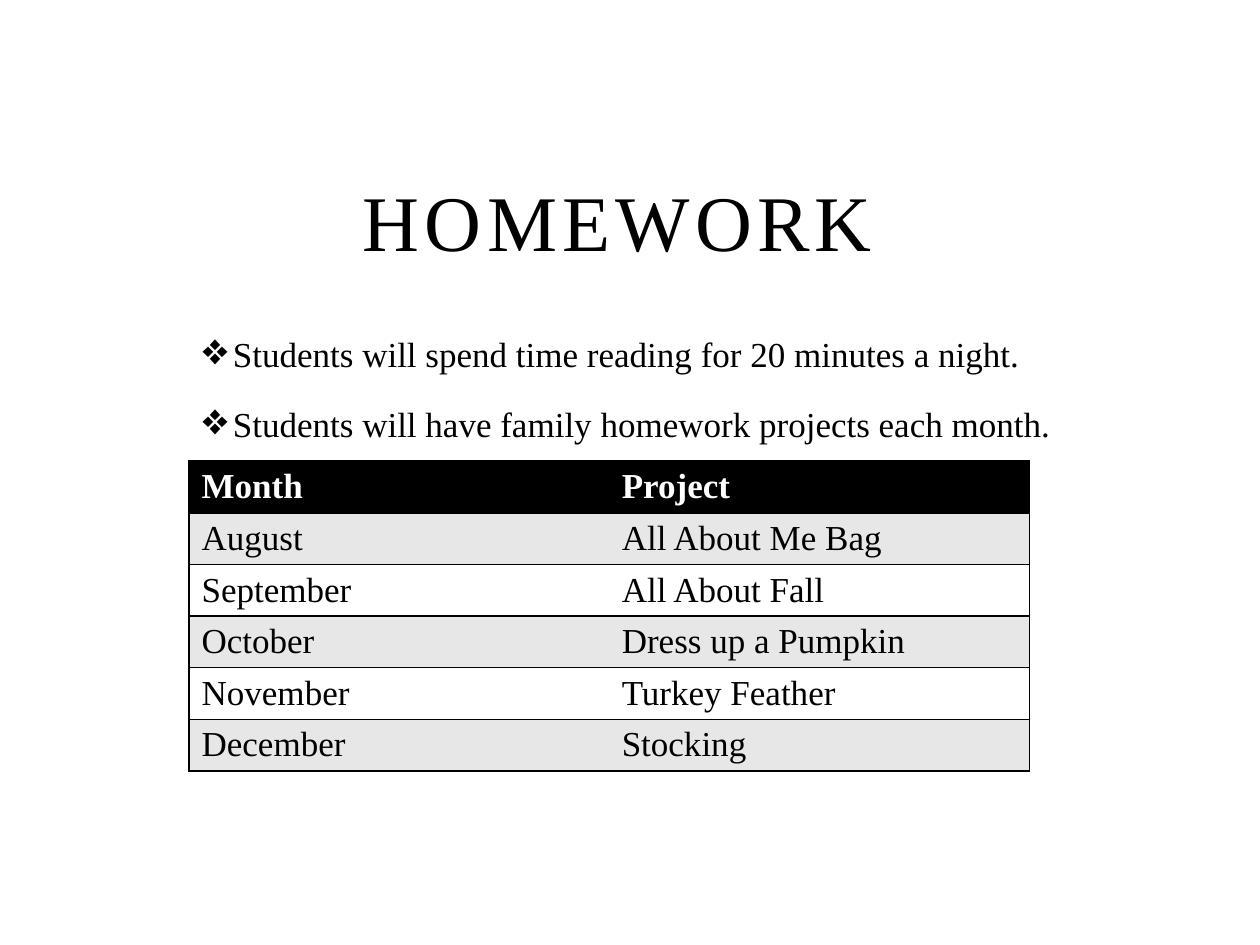
from lxml import etree
from pptx import Presentation
from pptx.dml.color import RGBColor
from pptx.enum.text import MSO_ANCHOR, PP_ALIGN
from pptx.oxml.ns import qn
from pptx.util import Inches, Pt

BLACK = RGBColor(0x00, 0x00, 0x00)
WHITE = RGBColor(0xFF, 0xFF, 0xFF)
BAND = RGBColor(0xE7, 0xE7, 0xE7)
FONT = "Times New Roman"

EXPECTATIONS = [
    "Students will spend time reading for 20 minutes a night.",
    "Students will have family homework projects each month.",
]
PROJECTS = [
    ("Month", "Project"),
    ("August", "All About Me Bag"),
    ("September", "All About Fall"),
    ("October", "Dress up a Pumpkin"),
    ("November", "Turkey Feather"),
    ("December", "Stocking"),
]


def style_runs(paragraph, size, color=BLACK, bold=False):
    for run in paragraph.runs:
        run.font.name = FONT
        run.font.size = Pt(size)
        run.font.color.rgb = color
        run.font.bold = bold


def add_title(slide, left, top, width, height):
    frame = slide.shapes.add_textbox(left, top, width, height).text_frame
    frame.word_wrap = True
    frame.vertical_anchor = MSO_ANCHOR.BOTTOM
    frame.text = "HOMEWORK "
    heading = frame.paragraphs[0]
    heading.alignment = PP_ALIGN.CENTER
    style_runs(heading, 45)
    heading.runs[0].font._element.set("spc", "300")


def add_bullet(paragraph, indent):
    properties = paragraph._p.get_or_add_pPr()
    properties.set("marL", str(indent))
    properties.set("indent", str(-indent))
    etree.SubElement(properties, qn("a:buFont"), typeface=FONT)
    etree.SubElement(properties, qn("a:buChar"), char="❖")


def add_expectations(slide, left, top, width, height):
    frame = slide.shapes.add_textbox(left, top, width, height).text_frame
    frame.word_wrap = True
    frame.text = "\n".join(EXPECTATIONS)
    for index, paragraph in enumerate(frame.paragraphs):
        add_bullet(paragraph, Inches(0.25))
        paragraph.line_spacing = 1.5
        if index:
            paragraph.space_before = Pt(4)
        style_runs(paragraph, 20)


def set_borders(cell, ruled_edges):
    """Rule the given edges (of L, R, T, B) in black and clear the others."""
    properties = cell._tc.get_or_add_tcPr()
    for edge in "LRTB":
        line = etree.SubElement(properties, qn(f"a:ln{edge}"), w=str(Pt(1)))
        if edge in ruled_edges:
            fill = etree.SubElement(line, qn("a:solidFill"))
            etree.SubElement(fill, qn("a:srgbClr"), val=str(BLACK))
        else:
            etree.SubElement(line, qn("a:noFill"))


def add_project_table(slide, left, top, width, height):
    table = slide.shapes.add_table(
        len(PROJECTS), len(PROJECTS[0]), left, top, width, height).table
    for row_index, entries in enumerate(PROJECTS):
        is_header = row_index == 0
        row_fill = BLACK if is_header else BAND if row_index % 2 else WHITE
        for column_index, entry in enumerate(entries):
            cell = table.cell(row_index, column_index)
            set_borders(cell, "RTB" if column_index else "LTB")
            cell.fill.solid()
            cell.fill.fore_color.rgb = row_fill
            cell.margin_bottom = Inches(0.02)
            cell.text = entry
            style_runs(cell.text_frame.paragraphs[0], 20,
                       WHITE if is_header else BLACK, is_header)


def main():
    deck = Presentation()
    deck.slide_width, deck.slide_height = Inches(10), Inches(7.5)
    slide = deck.slides.add_slide(deck.slide_layouts[6])
    left = Inches(1.5)
    add_title(slide, left, Inches(1.42), Inches(7), Inches(0.75))
    add_expectations(slide, left, Inches(2.42), Inches(7), Inches(3.33))
    add_project_table(slide, left, Inches(3.66), Inches(6.67), Inches(2.46))
    deck.save("out.pptx")


if __name__ == "__main__":
    main()
